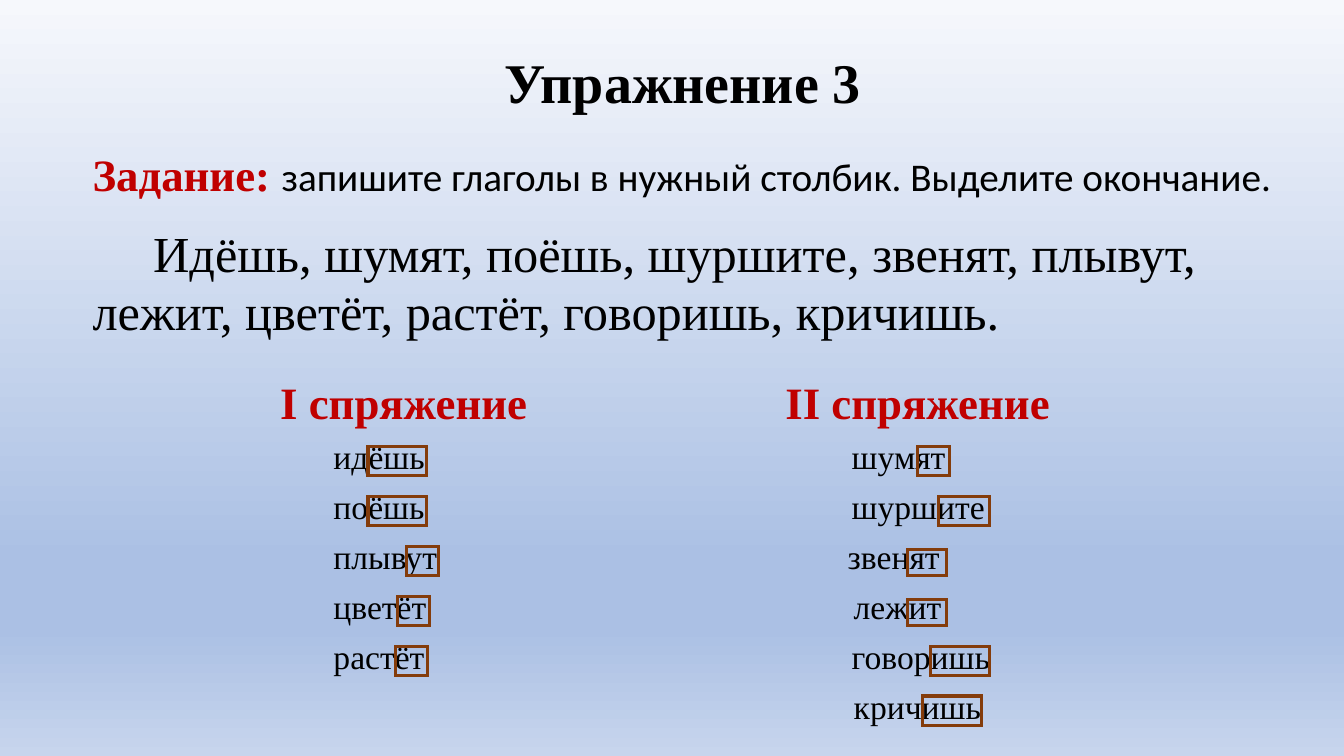
from lxml import etree
from pptx import Presentation
from pptx.dml.color import RGBColor
from pptx.enum.shapes import MSO_SHAPE
from pptx.enum.text import MSO_ANCHOR, PP_ALIGN
from pptx.oxml.ns import qn
from pptx.util import Inches, Pt

RECTANGLE = MSO_SHAPE.RECTANGLE
MIDDLE = MSO_ANCHOR.MIDDLE
CENTER = PP_ALIGN.CENTER
LEFT = PP_ALIGN.LEFT

BLACK = RGBColor(0x00, 0x00, 0x00)
RED = RGBColor(0xC0, 0x00, 0x00)
BROWN = RGBColor(0x84, 0x3C, 0x0B)
SKY = RGBColor(0xF6, 0xF8, 0xFC)
BLUE = RGBColor(0xAB, 0xC0, 0xE4)
PALE = RGBColor(0xC7, 0xD5, 0xED)
BACKGROUND_STOPS = [(0, SKY), (74, BLUE), (83, BLUE), (100, PALE)]

SERIF = "Times New Roman"
SANS = "Calibri"
PLAIN_TABLE_STYLE = "{2D5ABB26-0587-4C30-8999-92F81FD0307C}"

WIDTH, HEIGHT = Inches(13.33), Inches(7.5)
COLUMNS, ROWS = 40, 30

FIRST_ENDING_BOTTOM = 18.88
ENDING_PITCH = 1.98
TALL, LOW = 1.16, 1.04

VERB_ROWS = [
    ("идёшь", 5.14, "шумят"),
    ("поёшь", 5.14, "шуршите"),
    ("плывут", 5.1, "звенят"),
    ("цветёт", 5.16, "лежит"),
    ("растёт", 5.14, "говоришь"),
    ("", 5.16, "кричишь"),
]
FIRST_ENDINGS = [
    (10.95, 1.74, TALL),
    (10.95, 1.74, TALL),
    (12.09, 0.96, TALL),
    (11.82, 0.96, TALL),
    (11.76, 0.96, TALL),
]
SECOND_ENDINGS = [
    (27.31, 0.96, TALL),
    (27.94, 1.5, TALL),
    (27.01, 1.17, LOW),
    (27.01, 1.17, LOW),
    (27.7, 1.74, TALL),
    (27.46, 1.74, TALL),
]


class ExerciseSlide:
    def __init__(self, presentation):
        self.slide = presentation.slides.add_slide(presentation.slide_layouts[6])
        self.shapes = self.slide.shapes

    def area(self, column, row, columns, rows):
        return (
            int(WIDTH * column / COLUMNS),
            int(HEIGHT * row / ROWS),
            int(WIDTH * columns / COLUMNS),
            int(HEIGHT * rows / ROWS),
        )

    def background(self, stops):
        fill = self.slide.background.fill
        fill.gradient()
        fill.gradient_angle = 270
        stop_list = next(self.slide.element.iter(qn("a:gsLst")))
        for stop in list(stop_list):
            stop_list.remove(stop)
        for percent, color in stops:
            stop = etree.SubElement(stop_list, qn("a:gs"), pos=str(percent * 1000))
            etree.SubElement(stop, qn("a:srgbClr"), val=str(color))

    def style(self, run, size, color=BLACK, bold=False, name=SERIF):
        run.font.size = Pt(size)
        run.font.color.rgb = color
        run.font.bold = bold
        run.font.name = name

    def tab_stop(self, paragraph, inches):
        properties = paragraph._p.get_or_add_pPr()
        tabs = etree.SubElement(properties, qn("a:tabLst"))
        etree.SubElement(tabs, qn("a:tab"), pos=str(Inches(inches)), algn="l")

    def heading(self, area, text, size, color, alignment, tab=None):
        table = self.shapes.add_table(1, 1, *self.area(*area)).table
        table.first_row = table.horz_banding = False
        next(table._tbl.iter(qn("a:tableStyleId"))).text = PLAIN_TABLE_STYLE
        cell = table.cell(0, 0)
        cell.fill.background()
        cell.vertical_anchor = MIDDLE
        paragraph = cell.text_frame.paragraphs[0]
        paragraph.text = text
        paragraph.alignment = alignment
        if tab:
            self.tab_stop(paragraph, tab)
        self.style(paragraph.runs[0], size, color, True)

    def text_box(self, area):
        text_frame = self.shapes.add_textbox(*self.area(*area)).text_frame
        text_frame.word_wrap = True
        return text_frame

    def task(self, area, label, instruction, verbs):
        text_frame = self.text_box(area)
        text_frame.text = label
        first = text_frame.paragraphs[0]
        first.line_spacing = 0.9
        self.style(first.runs[0], 32, RED, True)
        run = first.add_run()
        run.text = instruction
        self.style(run, 28, name=SANS)
        second = text_frame.add_paragraph()
        second.text = verbs
        second.line_spacing = 0.97
        second.space_before = Pt(17)
        second._p.get_or_add_pPr().set("indent", str(Inches(0.6)))
        self.style(second.runs[0], 36)

    def verb_list(self, area, verb_rows):
        text_frame = self.text_box(area)
        for index, (first, tab, second) in enumerate(verb_rows):
            paragraph = text_frame.add_paragraph() if index else text_frame.paragraphs[0]
            paragraph.text = f"{first}\t{second}"
            paragraph.space_after = Pt(6.8)
            self.tab_stop(paragraph, tab)
            self.style(paragraph.runs[0], 24)

    def endings(self, boxes):
        for index, (column, columns, rows) in enumerate(boxes):
            top = FIRST_ENDING_BOTTOM + index * ENDING_PITCH - rows
            shape = self.shapes.add_shape(RECTANGLE, *self.area(column, top, columns, rows))
            shape.shadow.inherit = False
            shape.fill.background()
            shape.line.color.rgb = BROWN
            shape.line.width = Pt(2.25)
            outline = next(shape.element.iter(qn("a:ln")))
            etree.SubElement(outline, qn("a:miter"), lim="800000")


def main():
    presentation = Presentation()
    presentation.slide_width, presentation.slide_height = WIDTH, HEIGHT
    exercise = ExerciseSlide(presentation)
    exercise.background(BACKGROUND_STOPS)
    exercise.heading((3.06, 1.8, 34.51, 3.08), "Упражнение 3", 40, BLACK, CENTER)
    exercise.task(
        (2.46, 5.88, 36.88, 10.44),
        "Задание: ",
        "запишите глаголы в нужный столбик. Выделите окончание.",
        "Идёшь, шумят, поёшь, шуршите, звенят, плывут, "
        "лежит, цветёт, растёт, говоришь, кричишь.",
    )
    exercise.heading(
        (8.04, 14.04, 30.46, 4), "I спряжение\tII спряжение", 32, RED, LEFT, 5.01
    )
    exercise.verb_list((9.63, 17.12, 25.3, 12.08), VERB_ROWS)
    exercise.endings(FIRST_ENDINGS)
    exercise.endings(SECOND_ENDINGS)
    presentation.save("out.pptx")


if __name__ == "__main__":
    main()
